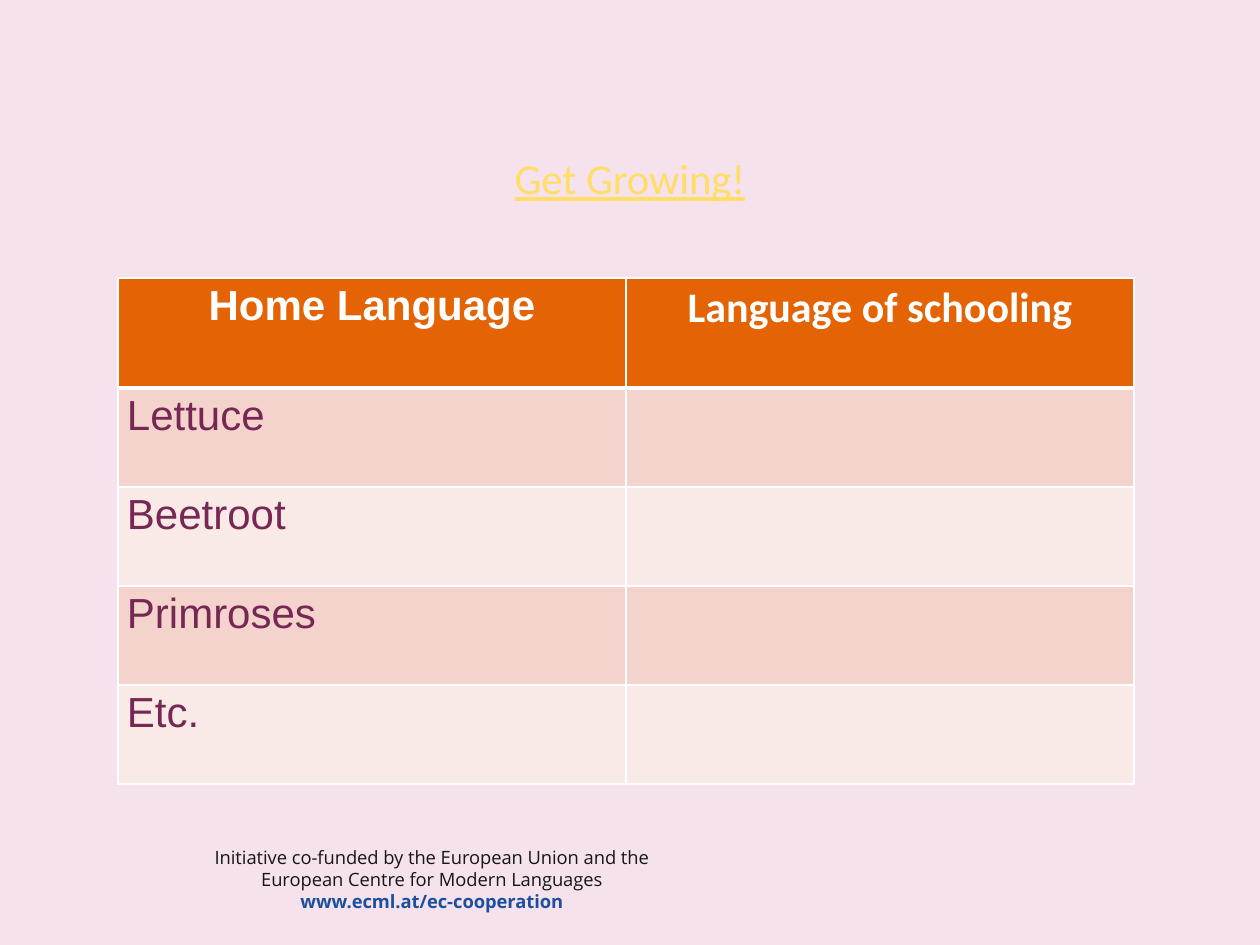
from lxml import etree
from pptx import Presentation
from pptx.dml.color import RGBColor
from pptx.enum.text import MSO_ANCHOR, MSO_AUTO_SIZE, PP_ALIGN
from pptx.oxml.ns import qn
from pptx.util import Emu, Pt

CENTER = PP_ALIGN.CENTER
LEFT = PP_ALIGN.LEFT
MIDDLE = MSO_ANCHOR.MIDDLE
NO_AUTOFIT = MSO_AUTO_SIZE.NONE

COLORS = {
    "background": "F5E2ED",
    "title": "FFDE66",
    "header": "E36305",
    "odd_row": "F4D3CC",
    "even_row": "FAEAE7",
    "white": "FFFFFF",
    "word": "772754",
    "footer": "161616",
    "address": "1C509C",
}
HEADINGS = [("Home Language", "Arial"), ("Language of schooling", "Calibri")]
WORDS = ["Lettuce", "Beetroot", "Primroses", "Etc."]
COLUMN_WIDTH = 508
HEADER_HEIGHT = 110
ROW_HEIGHT = 99


def px(length):
    return Emu(round(length * 914400 / 126))


def color(name):
    return RGBColor.from_string(COLORS[name])


def set_font(font, name, size, color_name, bold=False):
    font.name = name
    font.size = Pt(size)
    font.bold = bold
    font.color.rgb = color(color_name)


def add_title(page, text):
    title = page.shapes.title
    title.left, title.top, title.width, title.height = map(px, (87, 136, 1086, 83))
    frame = title.text_frame
    frame.text = text
    frame.auto_size = NO_AUTOFIT
    frame.vertical_anchor = MIDDLE
    para = frame.paragraphs[0]
    para.alignment = CENTER
    set_font(para.font, "Calibri", 24.3, "title")
    para.font.underline = True


def add_borders(cell, bottom_width):
    properties = cell._tc.get_or_add_tcPr()
    for side, width in (("L", 1), ("R", 1), ("T", 1), ("B", bottom_width)):
        line = etree.SubElement(properties, qn(f"a:ln{side}"), w=str(Pt(width)))
        fill = etree.SubElement(line, qn("a:solidFill"))
        etree.SubElement(fill, qn("a:srgbClr"), val=COLORS["white"])


def format_cell(cell, fill_name, bottom_width=1):
    cell.margin_left = cell.margin_right = px(9)
    cell.margin_top = cell.margin_bottom = px(5)
    add_borders(cell, bottom_width)
    cell.fill.solid()
    cell.fill.fore_color.rgb = color(fill_name)


def write_cell(cell, text, font_name, color_name, alignment, bold=False):
    cell.text = text
    para = cell.text_frame.paragraphs[0]
    para.alignment = alignment
    set_font(para.font, font_name, 24, color_name, bold)


def add_word_table(page):
    row_count, column_count = len(WORDS) + 1, len(HEADINGS)
    height = HEADER_HEIGHT + ROW_HEIGHT * len(WORDS)
    table = page.shapes.add_table(
        row_count, column_count, px(118), px(278),
        px(COLUMN_WIDTH * column_count), px(height),
    ).table
    for column in table.columns:
        column.width = px(COLUMN_WIDTH)
    for index, row in enumerate(table.rows):
        row.height = px(ROW_HEIGHT if index else HEADER_HEIGHT)
    for cell, (heading, font_name) in zip(table.rows[0].cells, HEADINGS):
        format_cell(cell, "header", bottom_width=3)
        write_cell(cell, heading, font_name, "white", CENTER, bold=True)
    for index, word in enumerate(WORDS, start=1):
        for cell in table.rows[index].cells:
            format_cell(cell, "odd_row" if index % 2 else "even_row")
        write_cell(table.cell(index, 0), word, "Arial", "word", LEFT)


def add_footer(page, text, address):
    box = page.shapes.add_textbox(px(171), px(840), px(522), px(79))
    frame = box.text_frame
    frame.word_wrap = True
    para = frame.paragraphs[0]
    para.alignment = CENTER
    span = para.add_run()
    span.text = text
    set_font(span.font, "Open Sans", 10.5, "footer")
    para.add_line_break()
    span = para.add_run()
    span.text = address
    set_font(span.font, "Open Sans", 10.5, "address", bold=True)


def main():
    deck = Presentation()
    deck.slide_width, deck.slide_height = px(1260), px(945)
    page = deck.slides.add_slide(deck.slide_layouts[5])
    page.background.fill.solid()
    page.background.fill.fore_color.rgb = color("background")
    add_footer(
        page,
        "Initiative co-funded by the European Union and the European Centre for Modern Languages",
        "www.ecml.at/ec-cooperation",
    )
    add_title(page, "Get Growing!")
    add_word_table(page)
    deck.save("out.pptx")


if __name__ == "__main__":
    main()
